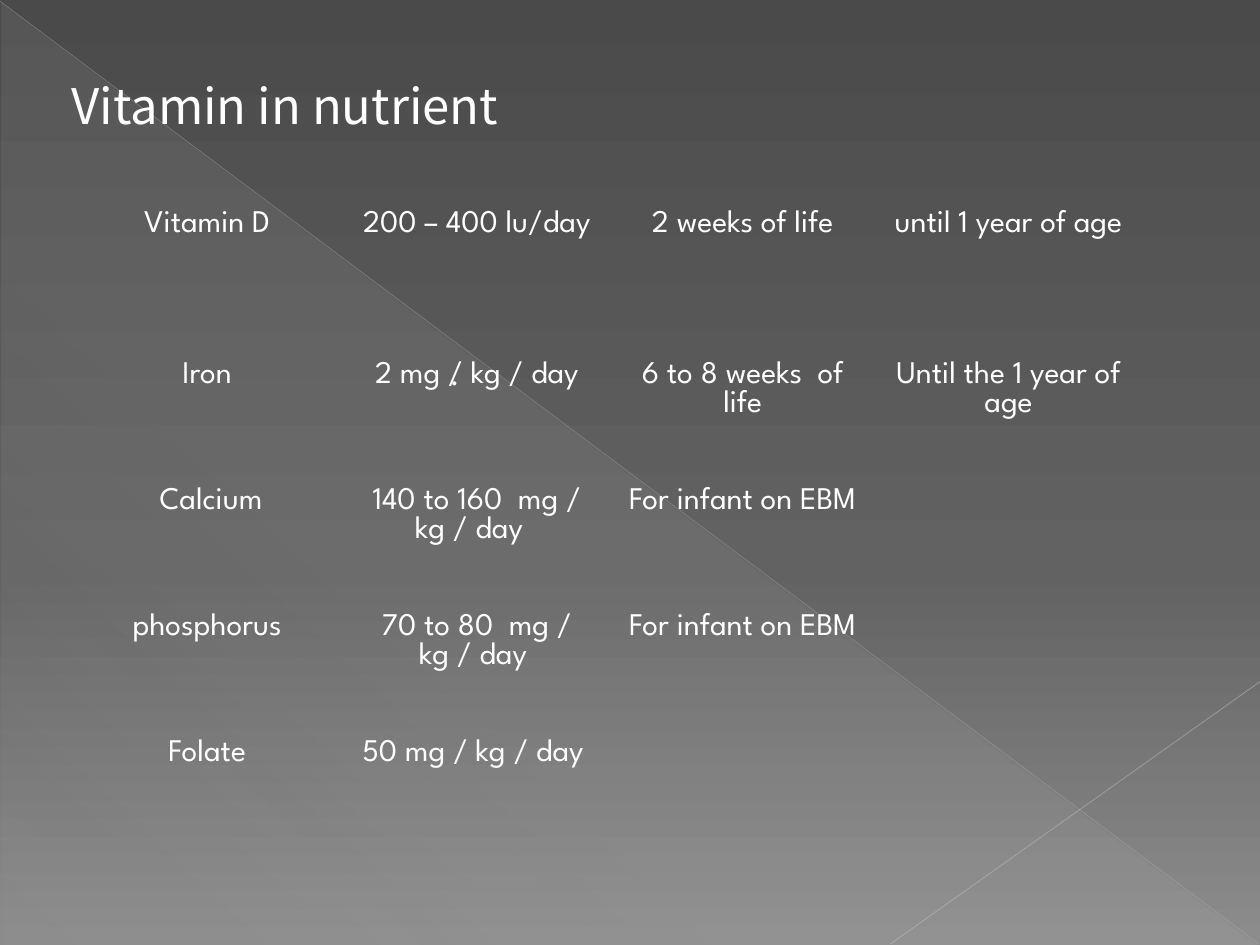
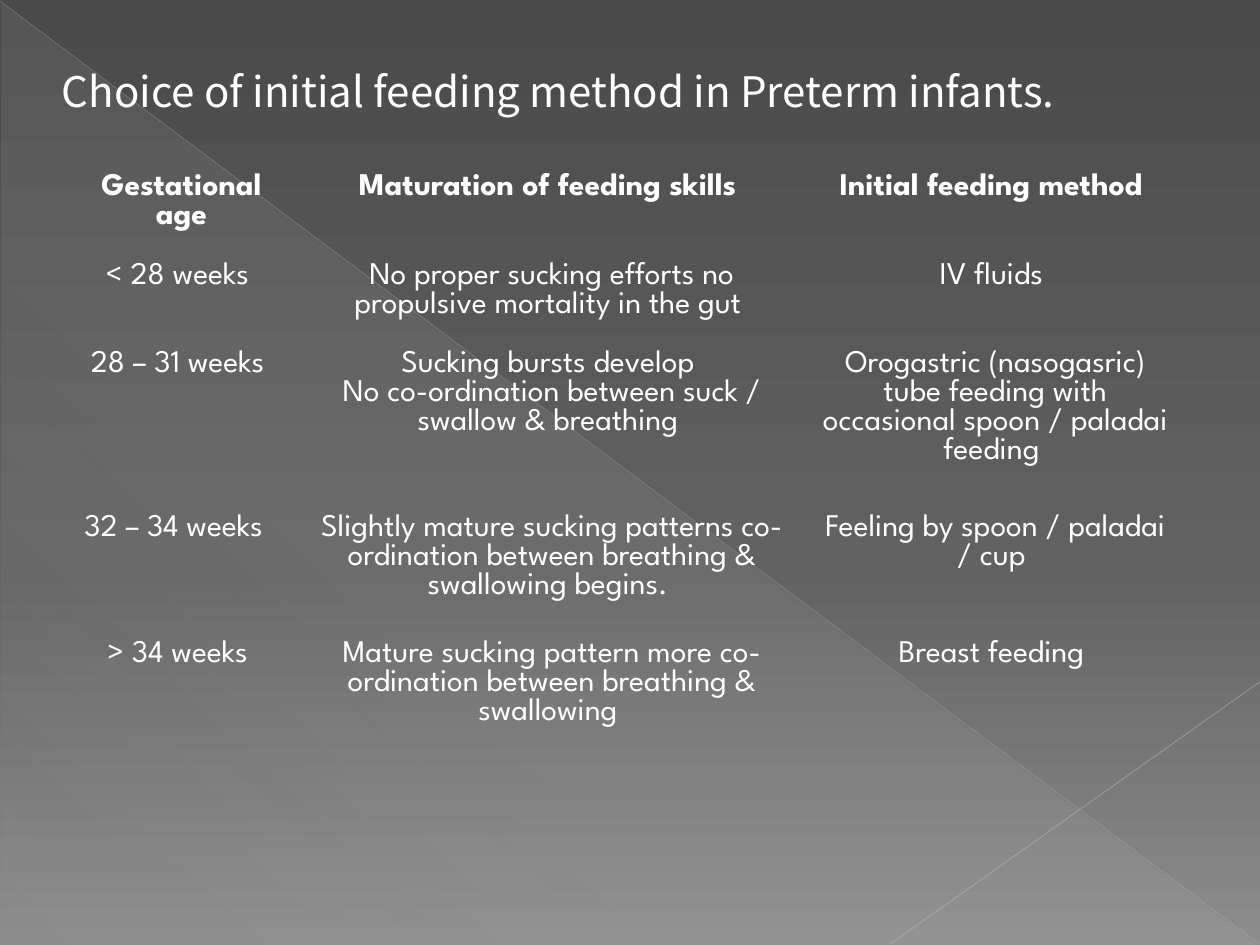
from dataclasses import dataclass

from lxml.etree import SubElement
from pptx import Presentation
from pptx.dml.color import RGBColor
from pptx.enum.shapes import MSO_CONNECTOR as Connector, MSO_SHAPE as Shape
from pptx.enum.text import MSO_ANCHOR as Anchor, MSO_AUTO_SIZE as AutoSize, PP_ALIGN as Align
from pptx.oxml.ns import qn
from pptx.util import Inches, Pt


@dataclass(frozen=True)
class Theme:
    text: RGBColor = RGBColor(0xFF, 0xFF, 0xFF)
    title_font: str = "Noto Sans CJK SC"
    body_font: str = "League Spartan"
    body_size: int = 18
    # Gradient stops: position %, colour, opacity %
    backdrop: tuple = ((0, "4A4A4A", 100), (60, "626262", 100), (100, "8C8C8C", 100))
    triangle: tuple = ((0, "D2D2D2", 10), (70, "D2D2D2", 8), (100, "D2D2D2", 1))
    # Diagonals: start, end, colour, width, opacity %
    diagonals: tuple = (
        ((0, 0.01), (9.99, 7.49), "BFBFBF", 0.39, 35),
        ((10, 5.41), (7.07, 7.49), "C6C6C6", 0.47, 45),
    )


THEME = Theme()
TITLE_ONLY = 5
NO_STYLE_NO_GRID = "{2D5ABB26-0587-4C30-8999-92F81FD0307C}"

VITAMIN_ROWS = [
    ["Vitamin D ", "200 – 400 lu/day", "2 weeks of life", "until 1 year of age"],
    ["Iron ", "2 mg / kg / day", "6 to 8 weeks  of life", "Until the 1 year of age"],
    ["Calcium", "140 to 160  mg / kg / day  ", "For infant on EBM", ""],
    ["phosphorus ", "70 to 80  mg / kg / day ", "For infant on EBM", ""],
    ["Folate ", "50 mg / kg / day ", "", ""],
]

FEEDING_ROWS = [
    ["Gestational age", "Maturation of feeding skills ", "Initial feeding method "],
    ["< 28 weeks ", "No proper sucking efforts no propulsive mortality in the gut ", "IV fluids "],
    ["28 – 31 weeks ",
     "Sucking bursts develop \nNo co-ordination between suck / swallow & breathing ",
     "Orogastric (nasogasric) tube feeding with occasional spoon / paladai feeding "],
    ["32 – 34 weeks  ",
     "Slightly mature sucking patterns co-ordination between breathing & swallowing begins. ",
     "Feeling by spoon / paladai / cup "],
    ["> 34 weeks ",
     "Mature sucking pattern more co-ordination between breathing & swallowing ",
     "Breast feeding "],
]


def set_alpha(color, opacity):
    SubElement(color, qn("a:alpha"), val=str(opacity * 1000))


def set_gradient(fill, owner, stops, angle):
    """Fill with the stops; the angle runs clockwise in degrees."""
    fill.gradient()
    fill.gradient_angle = 360 - angle
    stop_list = owner.find(".//" + qn("a:gsLst"))
    for stop in list(stop_list):
        stop_list.remove(stop)
    for position, rgb, opacity in stops:
        stop = SubElement(stop_list, qn("a:gs"), pos=str(position * 1000))
        color = SubElement(stop, qn("a:srgbClr"), val=rgb)
        if opacity < 100:
            set_alpha(color, opacity)


def format_paragraph(paragraph, font_name, size, align, bold=False):
    paragraph.alignment = align
    font = paragraph.font
    font.name, font.size, font.bold = font_name, Pt(size), bold
    font.color.rgb = THEME.text


def decorate_master(master, slide):
    """Give every slide the backdrop, the triangle and the diagonals."""
    set_gradient(master.background.fill, master.element.find(".//" + qn("p:bg")),
                 THEME.backdrop, 90)

    triangle = slide.shapes.add_shape(
        Shape.RIGHT_TRIANGLE, Inches(0.01), Inches(0.02), Inches(9.98), Inches(7.48))
    triangle.shadow.inherit = False
    triangle.line.fill.background()
    set_gradient(triangle.fill, triangle.element.spPr, THEME.triangle, 133)
    decorations = [triangle]

    for start, end, rgb, width, opacity in THEME.diagonals:
        diagonal = slide.shapes.add_connector(
            Connector.STRAIGHT, *(Inches(value) for value in start + end))
        diagonal.line.width = Pt(width)
        diagonal.line.color.rgb = RGBColor.from_string(rgb)
        properties = diagonal.element.spPr
        set_alpha(properties.find(".//" + qn("a:srgbClr")), opacity)
        SubElement(properties, qn("a:effectLst"))
        decorations.append(diagonal)

    # Move them behind the master's placeholders, under unused ids
    for index, shape in enumerate(decorations):
        shape.element.find(".//" + qn("p:cNvPr")).set("id", str(20 + index))
        master.shapes.element.insert(2 + index, shape.element)


def add_title(slide, text, box, size):
    title = slide.shapes.title
    title.left, title.top, title.width, title.height = (Inches(value) for value in box)
    frame = title.text_frame
    frame.text = text
    frame.auto_size = AutoSize.NONE
    frame.vertical_anchor = Anchor.MIDDLE
    format_paragraph(frame.paragraphs[0], THEME.title_font, size, Align.LEFT)


def add_stray_point(slide, box):
    frame = slide.shapes.add_textbox(*(Inches(value) for value in box)).text_frame
    frame.word_wrap = True
    frame.margin_left = Inches(3.1)
    frame.margin_top = Inches(0.16)
    frame.text = ". "
    paragraph = frame.paragraphs[0]
    paragraph.line_spacing = 1.5
    format_paragraph(paragraph, THEME.body_font, THEME.body_size, Align.JUSTIFY)


def add_plain_table(slide, rows, position, column_widths, row_heights, has_header=False):
    left, top = position
    table_frame = slide.shapes.add_table(
        len(rows), len(column_widths), Inches(left), Inches(top),
        Inches(sum(column_widths)), Inches(sum(row_heights)))
    table = table_frame.table
    table.first_row = has_header
    table.horz_banding = False
    table_frame.element.find(".//" + qn("a:tableStyleId")).text = NO_STYLE_NO_GRID

    for column, width in zip(table.columns, column_widths):
        column.width = Inches(width)
    for row, height in zip(table.rows, row_heights):
        row.height = Inches(height)
    for row_index, texts in enumerate(rows):
        for column_index, text in enumerate(texts):
            cell = table.cell(row_index, column_index)
            cell.fill.background()
            cell.text = text
            for paragraph in cell.text_frame.paragraphs:
                format_paragraph(paragraph, THEME.body_font, THEME.body_size,
                                 Align.CENTER, has_header and row_index == 0)


def build_vitamin_slide(slide):
    add_title(slide, "Vitamin in nutrient", (0.47, 0.55, 9.06, 0.57), 28)
    add_stray_point(slide, (0.47, 2.5, 9.06, 1.01))
    add_plain_table(slide, VITAMIN_ROWS, (0.62, 1.62), [2.11] * 4, [1.2, 1, 1, 1, 0.8])


def build_feeding_slide(slide):
    add_title(slide, "Choice of initial feeding method in Preterm infants.",
              (0.39, 0.47, 9.06, 0.5), 24)
    add_plain_table(slide, FEEDING_ROWS, (0.55, 1.33), [1.78, 4.1, 2.94],
                    [0.7, 0.7, 1.3, 1, 1.3], has_header=True)


def main():
    presentation = Presentation()
    presentation.slide_width, presentation.slide_height = Inches(10), Inches(7.5)
    layout = presentation.slide_layouts[TITLE_ONLY]
    slides = [presentation.slides.add_slide(layout) for _ in range(2)]
    decorate_master(presentation.slide_master, slides[0])
    build_vitamin_slide(slides[0])
    build_feeding_slide(slides[1])
    presentation.save("out.pptx")


if __name__ == "__main__":
    main()
